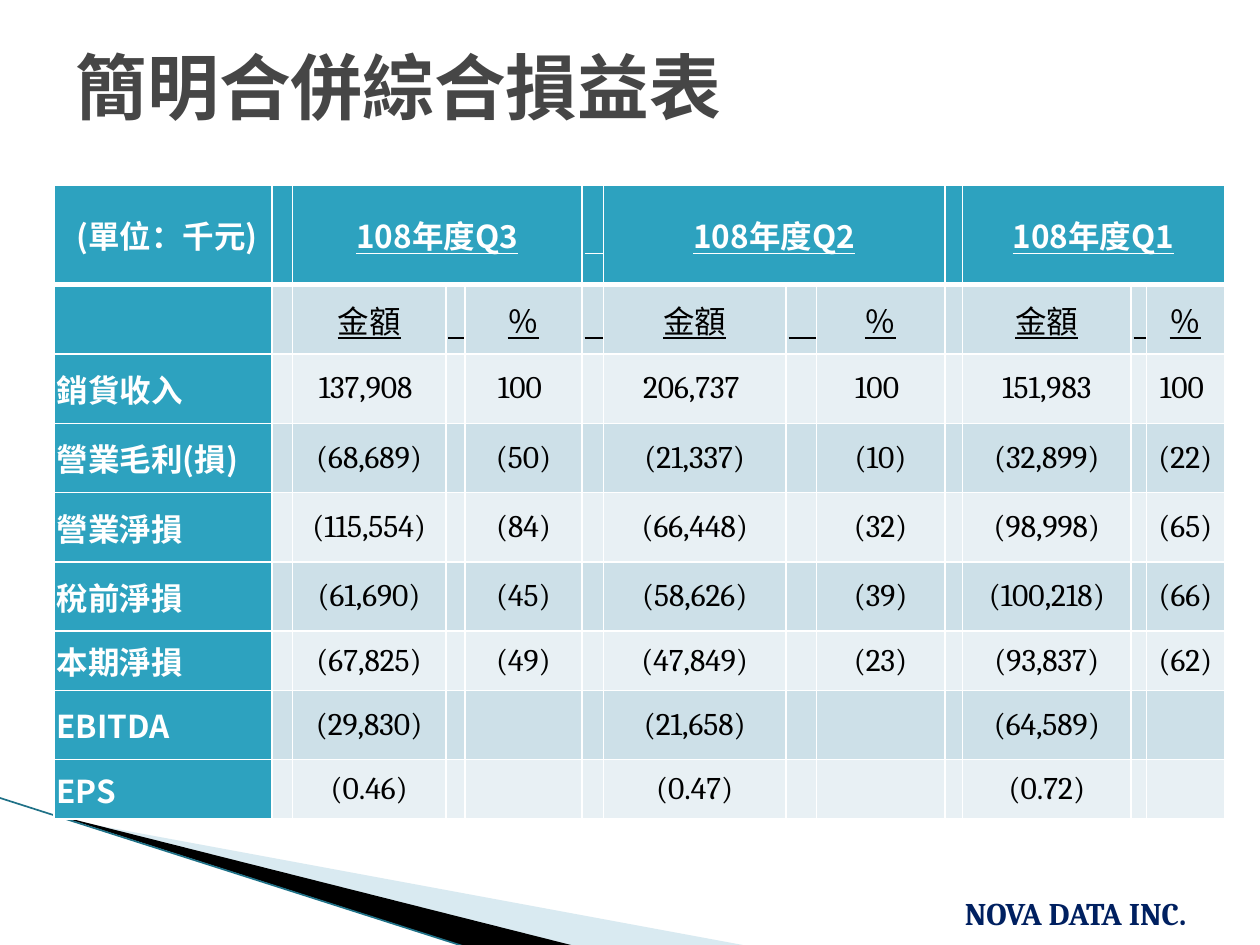
from dataclasses import dataclass

from lxml import etree
from pptx import Presentation
from pptx import util as u
from pptx.dml.color import RGBColor
from pptx.enum import shapes, text
from pptx.oxml import ns


@dataclass(frozen=True)
class Theme:
    """Colours, fonts and type sizes of the slide."""
    title: str = "464646"
    header: str = "2DA2BF"
    band_dark: str = "CDE0E8"
    band_light: str = "E8F0F4"
    white: str = "FFFFFF"
    black: str = "000000"
    navy: str = "002060"
    wedge: str = "A0CBDC"
    edge: str = "1F7187"
    cjk_font: str = "Noto Sans CJK SC"
    latin_font: str = "Cambria"
    title_size: float = 41
    body_size: float = 18


COLUMN_WIDTHS = [1.73, 0.16, 1.22, 0.15, 0.93, 0.17, 1.45, 0.24, 1.02, 0.14, 1.34, 0.12, 0.62]
ROW_HEIGHTS = [0.79] + [0.55] * 5 + [0.47, 0.55, 0.47]
UNIT = " (單位：千元)"
QUARTERS = ["108年度Q3", "108年度Q2", "108年度Q1"]
UNDERLINED_GAPS = {(0, 5), (1, 3), (1, 5), (1, 7), (1, 11)}
STATEMENT = [
    ["", "金額", "％", "金額", "％", "金額", "％"],
    ["銷貨收入", "137,908 ", "100 ", "206,737 ", "100 ", "151,983", "100 "],
    ["營業毛利(損)", "(68,689)", "(50)", "(21,337)", "(10)", "(32,899)", "(22)"],
    ["營業淨損", "(115,554)", "(84)", "(66,448)", "(32)", "(98,998)", "(65)"],
    ["稅前淨損", "(61,690)", "(45)", "(58,626)", "(39)", "(100,218)", "(66)"],
    ["本期淨損", "(67,825)", "(49)", "(47,849)", "(23)", "(93,837)", "(62)"],
    ["EBITDA", "(29,830)", "", "(21,658)", "", "(64,589)", ""],
    ["EPS", "(0.46)", "", "(0.47)", "", "(0.72)", ""],
]


class SlideBuilder:
    """Draws styled elements on the current slide."""

    def __init__(self, slide, theme):
        self.slide = slide
        self.theme = theme

    def format_runs(self, paragraph, font, size, color, bold=False, underline=False):
        """Style every run of a paragraph."""
        for run in paragraph.runs:
            run.font.name = font
            run.font.size = u.Pt(size)
            run.font.bold = bold
            run.font.underline = underline
            run.font.color.rgb = RGBColor.from_string(color)
            latin = run.font._element.find(ns.qn("a:latin"))
            east_asian = etree.Element(ns.qn("a:ea"), typeface=self.theme.cjk_font)
            latin.addnext(east_asian)

    def title(self, wording, left, top, width, height):
        """Fill and place the title placeholder."""
        shape = self.slide.shapes.title
        shape.left, shape.top = u.Inches(left), u.Inches(top)
        shape.width, shape.height = u.Inches(width), u.Inches(height)
        frame = shape.text_frame
        frame.text = wording
        frame.vertical_anchor = text.MSO_ANCHOR.TOP
        frame.auto_size = text.MSO_AUTO_SIZE.NONE
        paragraph = frame.paragraphs[0]
        paragraph.alignment = text.PP_ALIGN.LEFT
        paragraph.line_spacing = 0.9
        self.format_runs(paragraph, self.theme.cjk_font, self.theme.title_size,
                         self.theme.title, bold=True)

    def label(self, wording, left, top, width, height):
        """Add a bold one-line label."""
        box = self.slide.shapes.add_textbox(*map(u.Inches, (left, top, width, height)))
        frame = box.text_frame
        frame.text = wording
        frame.word_wrap = False
        self.format_runs(frame.paragraphs[0], self.theme.latin_font, self.theme.body_size,
                         self.theme.navy, bold=True)

    def polygon(self, points, color, opacity=100):
        """Add a closed filled outline."""
        start, *rest = [(u.Inches(x), u.Inches(y)) for x, y in points]
        builder = self.slide.shapes.build_freeform(*start)
        builder.add_line_segments(rest, close=True)
        shape = builder.convert_to_shape()
        shape.shadow.inherit = False
        shape.line.fill.background()
        shape.fill.solid()
        shape.fill.fore_color.rgb = RGBColor.from_string(color)
        if opacity < 100:
            fill_color = shape._element.spPr.find(".//" + ns.qn("a:srgbClr"))
            etree.SubElement(fill_color, ns.qn("a:alpha"), val=str(opacity * 1000))

    def line(self, start, end, color, width):
        """Add a straight line without shadow."""
        connector = self.slide.shapes.add_connector(
            shapes.MSO_CONNECTOR.STRAIGHT, *map(u.Inches, (*start, *end)))
        connector.line.color.rgb = RGBColor.from_string(color)
        connector.line.width = u.Pt(width)
        etree.SubElement(connector._element.spPr, ns.qn("a:effectLst"))

    def table(self, left, top, column_widths, row_heights):
        """Add a table with the given grid."""
        frame = self.slide.shapes.add_table(
            len(row_heights), len(column_widths), u.Inches(left), u.Inches(top),
            u.Inches(sum(column_widths)), u.Inches(sum(row_heights)))
        table = frame.table
        for column, width in zip(table.columns, column_widths):
            column.width = u.Inches(width)
        for row, height in zip(table.rows, row_heights):
            row.height = u.Inches(height)
        return table

    def cell(self, cell, fill, bottom_width=1, top_width=1):
        """Give a cell its borders, margins and fill."""
        properties = cell._tc.get_or_add_tcPr()
        widths = {"L": 1, "R": 1, "T": top_width, "B": bottom_width}
        for side, width in widths.items():
            border = etree.SubElement(properties, ns.qn("a:ln" + side), w=str(u.Pt(width)))
            solid = etree.SubElement(border, ns.qn("a:solidFill"))
            etree.SubElement(solid, ns.qn("a:srgbClr"), val=self.theme.white)
        cell.margin_left = cell.margin_right = u.Inches(0.02)
        cell.margin_top = cell.margin_bottom = 0
        cell.vertical_anchor = text.MSO_ANCHOR.MIDDLE
        cell.fill.solid()
        cell.fill.fore_color.rgb = RGBColor.from_string(fill)

    def cell_text(self, cell, wording, heading, alignment, underline=False):
        """Write a heading or a value into a cell."""
        cell.text_frame.text = wording
        paragraph = cell.text_frame.paragraphs[0]
        paragraph.alignment = alignment
        font = self.theme.cjk_font if heading else self.theme.latin_font
        color = self.theme.white if heading else self.theme.black
        self.format_runs(paragraph, font, self.theme.body_size, color, heading, underline)

    def income_statement(self, left, top):
        """Add the quarterly income statement."""
        theme = self.theme
        table = self.table(left, top, COLUMN_WIDTHS, ROW_HEIGHTS)
        header = [UNIT] + [item for quarter in QUARTERS for item in (quarter, "")]
        for row, values in enumerate([header] + STATEMENT):
            band = theme.band_dark if row % 2 else theme.band_light
            for column in range(len(COLUMN_WIDTHS)):
                cell = table.cell(row, column)
                heading = row == 0 or column == 0
                self.cell(cell, theme.header if heading else band,
                          bottom_width=3 if row == 0 else 1,
                          top_width=3 if row == 1 else 1)
                wording = "" if column % 2 else values[column // 2]
                if (row, column) in UNDERLINED_GAPS:
                    wording = "　"
                alignment = (text.PP_ALIGN.JUSTIFY if column == 0 and row > 0
                             else text.PP_ALIGN.CENTER)
                self.cell_text(cell, wording, heading, alignment,
                               underline=row < 2 and column > 0)
        for column in (2, 6, 10):
            table.cell(0, column).merge(table.cell(0, column + 2))


def main():
    """Build and save the presentation."""
    presentation = Presentation()
    presentation.slide_width, presentation.slide_height = u.Inches(10), u.Inches(7.5)
    slide = presentation.slides.add_slide(presentation.slide_layouts[5])
    theme = Theme()
    builder = SlideBuilder(slide, theme)
    builder.polygon([(0.55, 6.51), (5.95, 7.51), (4.56, 7.51), (0.55, 6.5)], theme.wedge, 40)
    builder.polygon([(0.53, 6.49), (4.57, 7.51), (3.72, 7.52), (0.54, 6.5)], theme.black)
    builder.line((-0.01, 6.33), (3.71, 7.52), theme.edge, 0.95)
    builder.income_statement(0.43, 1.47)
    builder.label("NOVA DATA INC.", 7.56, 7.05, 2.37, 0.4)
    builder.title("簡明合併綜合損益表", 0.5, 0.37, 9, 1.25)
    presentation.save("out.pptx")


if __name__ == "__main__":
    main()
